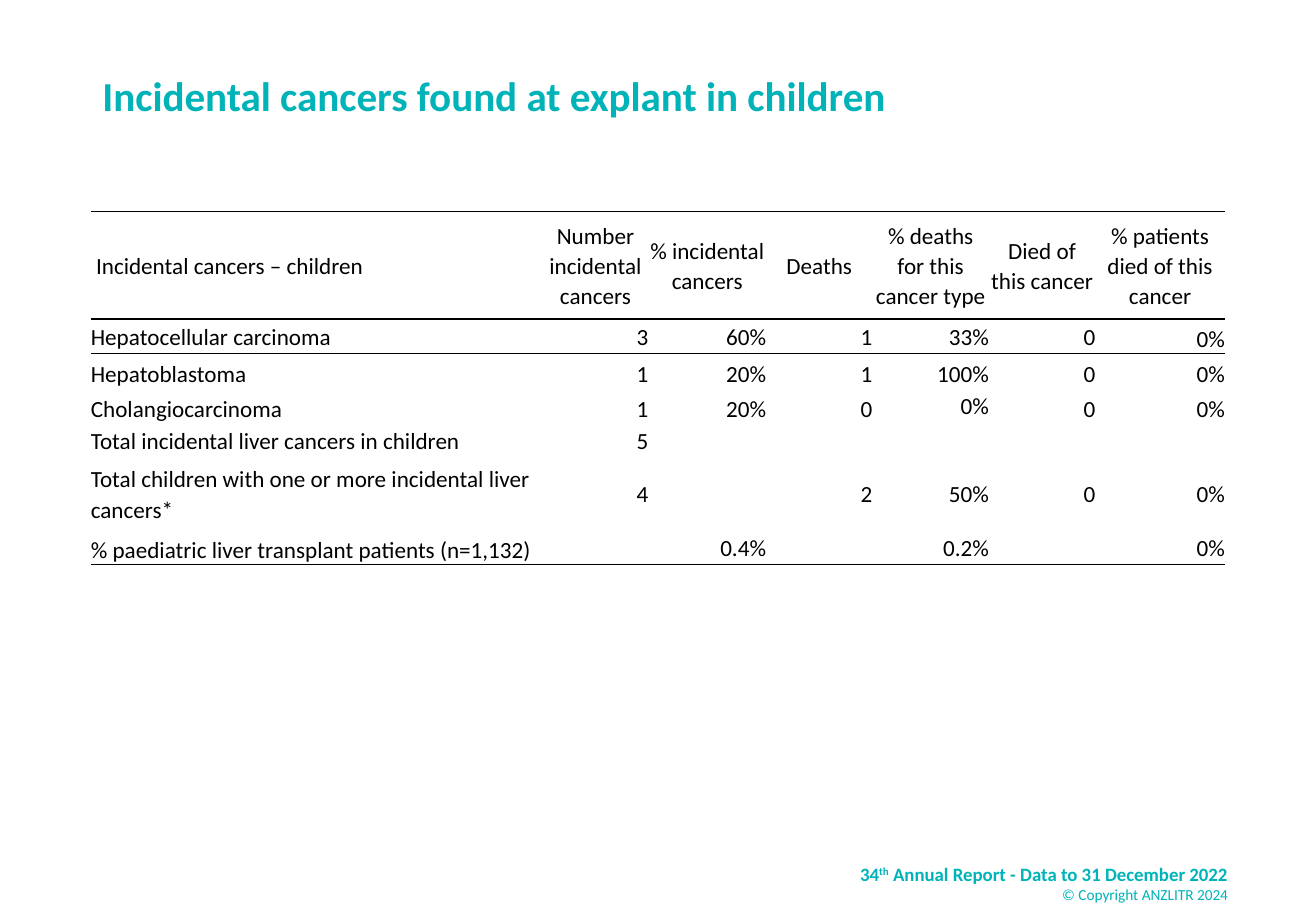
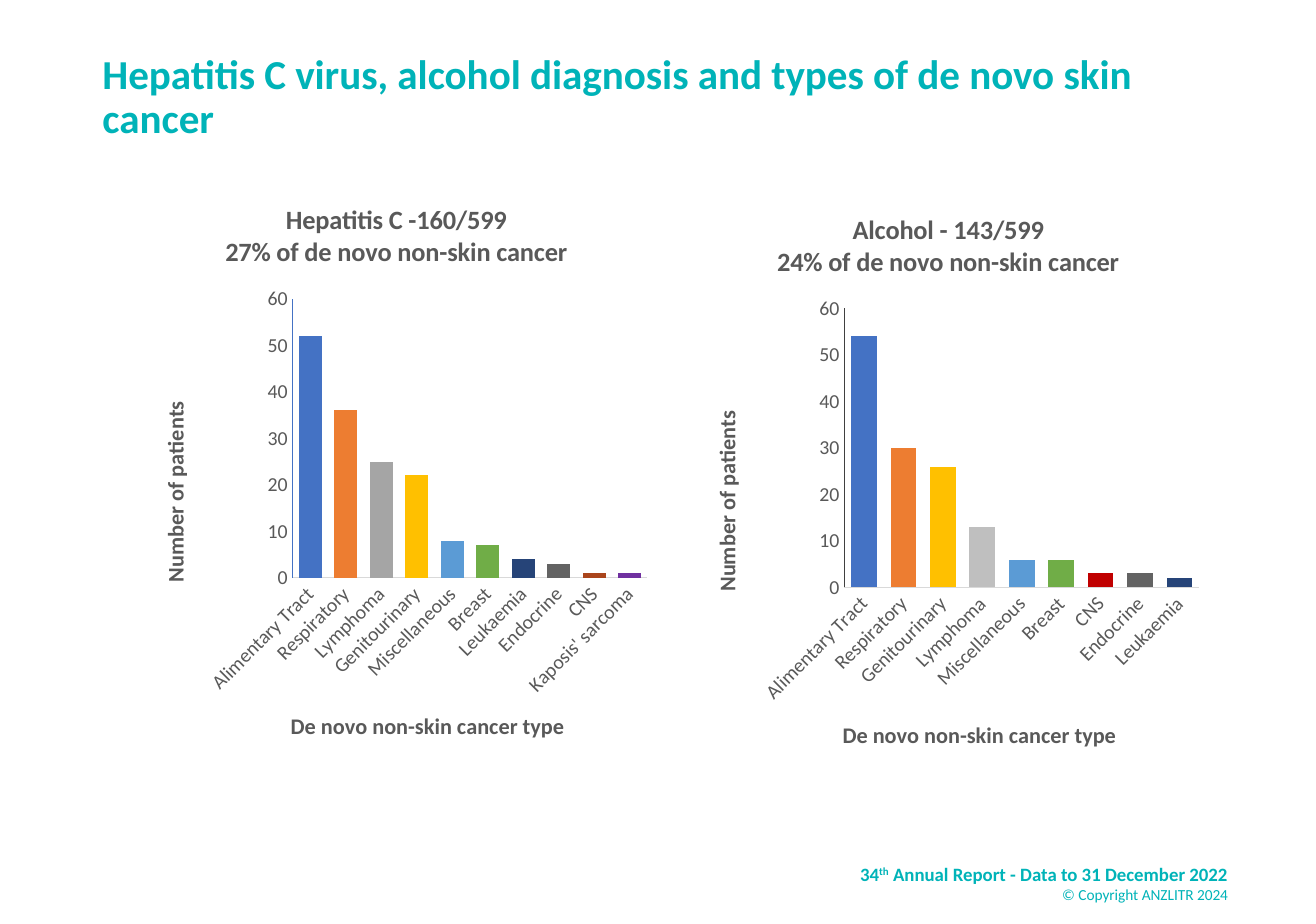
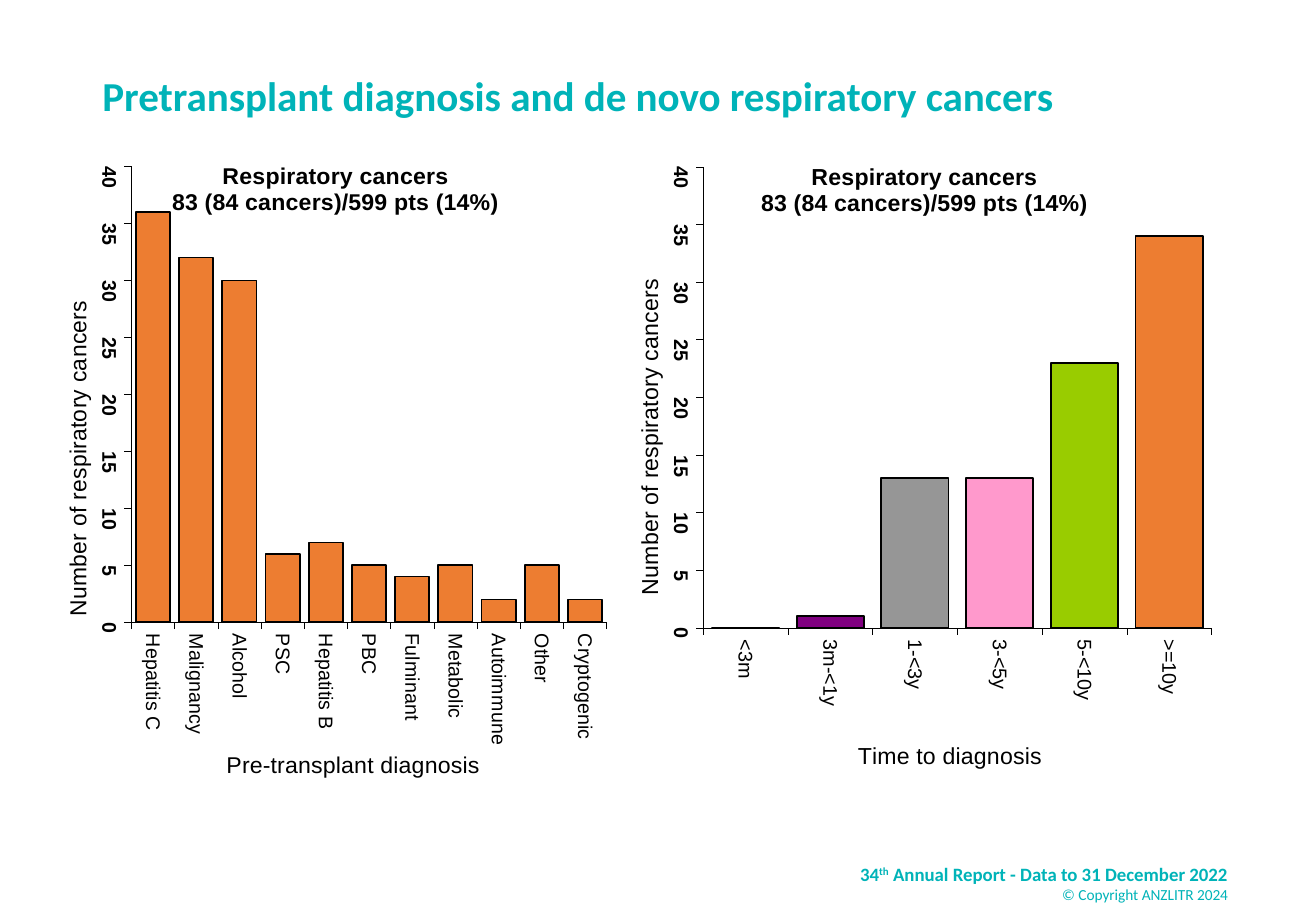
"""Build three report slides: a table of incidental cancers and two pairs of column charts."""
from lxml.etree import SubElement
from pptx import Presentation
from pptx.chart.data import CategoryChartData
from pptx.dml.color import RGBColor
from pptx.enum.chart import XL_CHART_TYPE as CT, XL_TICK_MARK as TICK
from pptx.enum.text import MSO_ANCHOR as ANCHOR, PP_ALIGN as ALIGN
from pptx.oxml import parse_xml
from pptx.oxml.ns import nsdecls, qn
from pptx.util import Pt

TEAL = RGBColor(0x00, 0xB3, 0xB8)
BLACK = RGBColor(0, 0, 0)
GREY = RGBColor(0x59, 0x59, 0x59)
LIGHT = RGBColor(0xD9, 0xD9, 0xD9)
CHARCOAL = RGBColor(0x40, 0x40, 0x40)
BLUE = RGBColor(0x44, 0x72, 0xC4)
ORANGE = RGBColor(0xED, 0x7D, 0x31)
SILVER = RGBColor(0xA5, 0xA5, 0xA5)
PALE = RGBColor(0xBF, 0xBF, 0xBF)
GOLD = RGBColor(0xFF, 0xC0, 0x00)
SKY = RGBColor(0x5B, 0x9B, 0xD5)
GREEN = RGBColor(0x70, 0xAD, 0x47)
NAVY = RGBColor(0x26, 0x44, 0x78)
SLATE = RGBColor(0x63, 0x63, 0x63)
RUST = RGBColor(0xAA, 0x45, 0x1C)
VIOLET = RGBColor(0x70, 0x30, 0xA0)
RED = RGBColor(0xC0, 0x00, 0x00)
STEEL = RGBColor(0x84, 0x97, 0xB0)
PURPLE = RGBColor(0x80, 0x00, 0x80)
MID_GREY = RGBColor(0x96, 0x96, 0x96)
PINK = RGBColor(0xFF, 0x99, 0xCC)
LIME = RGBColor(0x99, 0xCC, 0x00)

LEFT = 55
TABLE_TITLE = "Incidental cancers found at explant in children"
ROWS = [
    ("Incidental cancers – children", "Number incidental cancers", "% incidental cancers", "Deaths",
     "% deaths for this cancer type", "Died of this cancer", "% patients died of this cancer"),
    ("Hepatocellular carcinoma", "3", "60%", "1", "33%", "0", "0%"),
    ("Hepatoblastoma", "1", "20%", "1", "100%", "0", "0%"),
    ("Cholangiocarcinoma", "1", "20%", "0", "0%", "0", "0%"),
    ("Total incidental liver cancers in children", "5", "", "", "", "", ""),
    ("Total children with one or more incidental liver cancers*", "4", "", "2", "50%", "0", "0%"),
    ("% paediatric liver transplant patients (n=1,132)", "", "0.4%", "", "0.2%", "", "0%"),
]
COL_WIDTHS = [273.6, 64.1, 71.3, 64.4, 70.6, 64.4, 78.5]
ROW_HEIGHTS = [64.8, 21.1, 21.1, 21.1, 21.1, 43.4, 21.1]
BOTTOM_CELLS = {(1, 6), (6, 0)} | {(2, c) for c in range(7)} | {(3, c) for c in range(7) if c != 4}
RULES_ABOVE, RULES_BELOW = {0, 1}, {0, 6}

CANCER_STYLE = dict(
    font="Calibri", color=GREY, title_size=16, axis_size=13.5, axis_bold=True, value_bold=False,
    cat_rot=-45, value_rot=0, gap=54, top=60, step=10, tick=TICK.NONE, cat_line=LIGHT,
    axis_width=0.75, outline=None, plot=(0.3, 0.202, 0.679, 0.477), title_at=(0.165, 0.031),
    cat_title="De novo non-skin cancer type", cat_title_at=(0.289, 0.899),
    value_title="Number of patients", value_title_at=(0.039, 0.37))
RESPIRATORY_STYLE = dict(
    font="Arial", color=BLACK, title_size=14, axis_size=14, axis_bold=False, value_bold=True,
    cat_rot=90, value_rot=90, gap=26, top=40, step=5, tick=TICK.OUTSIDE, cat_line=BLACK,
    value_line=BLACK, axis_width=0.25, outline=BLACK,
    title=("Respiratory cancers", "83 (84 cancers)/599 pts (14%)"),
    value_title="Number of respiratory cancers")

CHART_SLIDES = [
    ("Hepatitis C virus, alcohol diagnosis and types of de novo skin cancer", CANCER_STYLE, [
        dict(box=(82, 109.4, 316.8, 354.2), value_line=BLUE,
             title=("Hepatitis C -160/599", "27% of de novo non-skin cancer"),
             bars=[("Alimentary Tract", 52, BLUE), ("Respiratory", 36, ORANGE),
                   ("Lymphoma", 25, SILVER), ("Genitourinary", 22, GOLD),
                   ("Miscellaneous", 8, SKY), ("Breast", 7, GREEN), ("Leukaemia", 4, NAVY),
                   ("Endocrine", 3, SLATE), ("CNS", 1, RUST), ("Kaposis' sarcoma", 1, VIOLET)]),
        dict(box=(416.2, 115.2, 316.8, 354.2), value_line=CHARCOAL,
             title=("Alcohol - 143/599", "24% of de novo non-skin cancer"),
             bars=[("Alimentary Tract", 54, BLUE), ("Respiratory", 30, ORANGE),
                   ("Genitourinary", 26, GOLD), ("Lymphoma", 13, PALE),
                   ("Miscellaneous", 6, SKY), ("Breast", 6, GREEN), ("CNS", 3, RED),
                   ("Endocrine", 3, SLATE), ("Leukaemia", 2, NAVY)]),
    ]),
    ("Pretransplant diagnosis and de novo respiratory cancers", RESPIRATORY_STYLE, [
        dict(box=(35.3, 84.2, 335.5, 391), plot=(0.132, 0.043, 0.858, 0.714),
             title_at=(0.199, 0.03), cat_title="Pre-transplant diagnosis",
             cat_title_at=(0.296, 0.95), value_title_at=(0, 0.252),
             bars=[(name, n, ORANGE) for name, n in [
                 ("Hepatitis C", 36), ("Malignancy", 32), ("Alcohol", 30), ("PSC", 6),
                 ("Hepatitis B", 7), ("PBC", 5), ("Fulminant", 4), ("Metabolic", 5),
                 ("Autoimmune", 2), ("Other", 5), ("Cryptogenic", 2)]]),
        dict(box=(381.6, 84.2, 357.1, 391), plot=(0.124, 0.043, 0.862, 0.714),
             title_at=(0.216, 0.03), cat_title="Time to diagnosis",
             cat_title_at=(0.379, 0.925), value_title_at=(0, 0.21),
             bars=[("<3m", 0, STEEL), ("3m-<1y", 1, PURPLE), ("1-<3y", 13, MID_GREY),
                   ("3-<5y", 13, PINK), ("5-<10y", 23, LIME), (">=10y", 34, ORANGE)]),
    ]),
]


def add_run(p, text, size, color, font="Calibri", bold=False):
    r = p.add_run()
    r.text = text
    r.font.size, r.font.name, r.font.bold = Pt(size), font, bold
    r.font.color.rgb = color
    return r


def add_box(s, left, top, width, height):
    tf = s.shapes.add_textbox(Pt(left), Pt(top), Pt(width), Pt(height)).text_frame
    tf.word_wrap = True
    return tf


def new_slide(prs, title):
    s = prs.slides.add_slide(prs.slide_layouts[6])
    tf = add_box(s, LEFT, 20.2, 686.9, 78.5)
    tf.vertical_anchor = ANCHOR.MIDDLE
    tf.paragraphs[0].line_spacing = 0.9
    add_run(tf.paragraphs[0], title, 24.9, TEAL, bold=True)

    tf = add_box(s, 482.2, 518.8, 268.6, 29.5)
    p = tf.paragraphs[0]
    add_run(p, "34", 11.4, TEAL, bold=True)
    r = add_run(p, "th", 11.4, TEAL, bold=True)
    r.font._element.set("baseline", "30000")
    add_run(p, " Annual Report - Data to 31 December 2022", 11.4, TEAL, bold=True)
    add_run(tf.add_paragraph(), "© Copyright ANZLITR 2024", 9.3, TEAL)
    for p in tf.paragraphs:
        p.alignment = ALIGN.RIGHT
    return s


def add_rule(cell, side):
    cell._tc.get_or_add_tcPr().insert(0, parse_xml(
        f'<a:{side} {nsdecls("a")} w="12700"><a:solidFill><a:srgbClr val="{BLACK}"/>'
        f'</a:solidFill></a:{side}>'))


def fill_cell(cell, text, row, col):
    cell.margin_left = cell.margin_right = cell.margin_top = cell.margin_bottom = 0
    cell.vertical_anchor = ANCHOR.BOTTOM if (row, col) in BOTTOM_CELLS else ANCHOR.MIDDLE
    cell.fill.background()
    if row in RULES_BELOW:
        add_rule(cell, "lnB")
    if row in RULES_ABOVE:
        add_rule(cell, "lnT")
    p = cell.text_frame.paragraphs[0]
    p.line_spacing = 1.07
    if col:
        p.alignment = ALIGN.RIGHT if row else ALIGN.CENTER
    elif not row:
        cell.margin_left = Pt(3.2)
    if text:
        add_run(p, text, 14, BLACK)
    else:
        SubElement(p._p, qn("a:endParaRPr"), sz="1400")


def add_cancer_table(s):
    frame = s.shapes.add_table(len(ROWS), len(COL_WIDTHS), Pt(LEFT), Pt(128.2),
                               Pt(sum(COL_WIDTHS)), Pt(sum(ROW_HEIGHTS)))
    table = frame.table
    table.first_row = table.horz_banding = False
    table._tbl.tblPr.find(qn("a:tableStyleId")).text = "{2D5ABB26-0587-4C30-8999-92F81FD0307C}"
    for column, width in zip(table.columns, COL_WIDTHS):
        column.width = Pt(width)
    for i, (values, height) in enumerate(zip(ROWS, ROW_HEIGHTS)):
        table.rows[i].height = Pt(height)
        for j, text in enumerate(values):
            fill_cell(table.cell(i, j), text, i, j)


def make_layout(values, inner=False):
    keys = ("x", "y", "w", "h")[:len(values)]
    target = '<c:layoutTarget val="inner"/>' if inner else ""
    modes = "".join(f'<c:{k}Mode val="edge"/>' for k in keys[:2])
    sizes = "".join(f'<c:{k} val="{v}"/>' for k, v in zip(keys, values))
    return parse_xml(f'<c:layout {nsdecls("c")}><c:manualLayout>{target}{modes}{sizes}'
                     f'</c:manualLayout></c:layout>')


def drop_layout(element):
    for old in element.findall(qn("c:layout")):
        element.remove(old)


def set_rotation(text_body, degrees):
    body = text_body.find(qn("a:bodyPr"))
    body.set("rot", str(degrees * 60000))
    body.set("vert", "horz")


def write_title(title, lines, at, size, bold, spec, degrees=0):
    tf = title.text_frame
    for i, line in enumerate(lines):
        p = tf.add_paragraph() if i else tf.paragraphs[0]
        add_run(p, line, size, spec["color"], spec["font"], bold)
    set_rotation(tf._txBody, degrees)
    element = title._element
    drop_layout(element)
    element.find(qn("c:tx")).addnext(make_layout(at))


def style_axis(axis, spec, kind, title_rot):
    axis.has_major_gridlines = False
    axis.major_tick_mark, axis.minor_tick_mark = spec["tick"], TICK.NONE
    axis.format.line.color.rgb = spec[f"{kind}_line"]
    axis.format.line.width = Pt(spec["axis_width"])
    font = axis.tick_labels.font
    font.size, font.name = Pt(12), spec["font"]
    font.bold = kind == "value" and spec["value_bold"]
    font.color.rgb = spec["color"]
    set_rotation(axis._element.find(qn("c:txPr")), spec[f"{kind}_rot"])
    write_title(axis.axis_title, [spec[f"{kind}_title"]], spec[f"{kind}_title_at"],
                spec["axis_size"], spec["axis_bold"], spec, title_rot)


def add_column_chart(s, spec):
    names, values, colors = zip(*spec["bars"])
    data = CategoryChartData(number_format="0")
    data.categories = names
    data.add_series("Series 1", values)
    chart = s.shapes.add_chart(CT.COLUMN_CLUSTERED, *map(Pt, spec["box"]), data).chart
    chart.has_legend = False
    chart.font.name, chart.font.size = spec["font"], Pt(12)
    write_title(chart.chart_title, spec["title"], spec["title_at"], spec["title_size"], True, spec)

    style_axis(chart.category_axis, spec, "cat", 0)
    style_axis(chart.value_axis, spec, "value", -90)
    axis = chart.value_axis
    axis.minimum_scale, axis.maximum_scale, axis.major_unit = 0, spec["top"], spec["step"]

    plot = chart.plots[0]
    plot.gap_width, plot.vary_by_categories = spec["gap"], False
    for i, color in enumerate(colors):
        fmt = plot.series[0].points[i].format
        fmt.fill.solid()
        fmt.fill.fore_color.rgb = color
        if spec["outline"] is None:
            fmt.line.fill.background()
        else:
            fmt.line.color.rgb = spec["outline"]
            fmt.line.width = Pt(1.05)
    area = chart._chartSpace.chart.plotArea
    drop_layout(area)
    area.insert(0, make_layout(spec["plot"], inner=True))


def main():
    prs = Presentation()
    prs.slide_width, prs.slide_height = Pt(797), Pt(559.4)
    add_cancer_table(new_slide(prs, TABLE_TITLE))
    for title, style, charts in CHART_SLIDES:
        s = new_slide(prs, title)
        for chart in charts:
            add_column_chart(s, {**style, **chart})
    prs.save("out.pptx")


if __name__ == "__main__":
    main()
